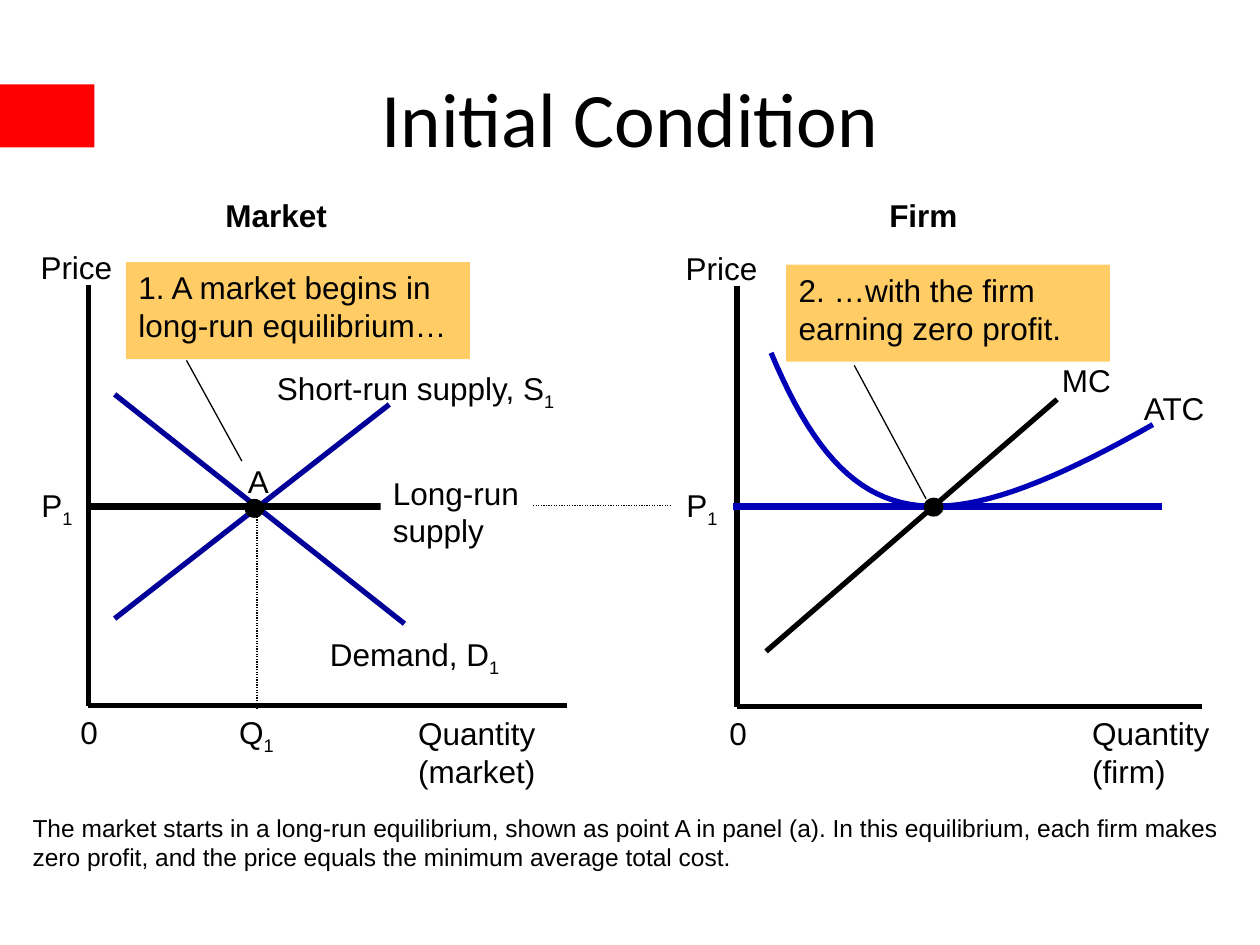
from lxml.etree import SubElement
from pptx import Presentation
from pptx.dml.color import RGBColor
from pptx.enum.dml import MSO_LINE_DASH_STYLE as Dash
from pptx.enum.shapes import MSO_CONNECTOR as Link, MSO_SHAPE as Shape
from pptx.enum.text import MSO_ANCHOR as Anchor, MSO_AUTO_SIZE as Fit, PP_ALIGN as Align
from pptx.oxml.ns import qn
from pptx.util import Inches, Pt

BLACK = RGBColor(0x00, 0x00, 0x00)
WHITE = RGBColor(0xFF, 0xFF, 0xFF)
RED = RGBColor(0xFF, 0x00, 0x00)
NAVY = RGBColor(0x00, 0x00, 0x99)
BLUE = RGBColor(0x00, 0x00, 0xB8)
AMBER = RGBColor(0xFF, 0xCC, 0x66)
STEPS = 40


def add_title(slide, text):
    title = slide.shapes.title
    title.left, title.top, title.width, title.height = map(Inches, (0.5, 0.3, 9, 1.25))
    title.text_frame.text = text
    title.text_frame.vertical_anchor = Anchor.MIDDLE
    para = title.text_frame.paragraphs[0]
    para.alignment = Align.CENTER
    para.font.name, para.font.size = "Calibri", Pt(44)
    para.font.color.rgb = BLACK


def add_solid(slide, kind, box, color):
    shape = slide.shapes.add_shape(kind, *map(Inches, box))
    shape.shadow.inherit = False
    shape.fill.solid()
    shape.fill.fore_color.rgb = color
    shape.line.fill.background()


def add_text(slide, box, text, size=18, wrap=False, bold=False, align=Align.LEFT, fill=None):
    shape = slide.shapes.add_textbox(*map(Inches, box))
    if fill is not None:
        shape.fill.solid()
        shape.fill.fore_color.rgb = fill
    frame = shape.text_frame
    frame.word_wrap = wrap
    frame.auto_size = Fit.SHAPE_TO_FIT_TEXT
    for i, row in enumerate(text.split("\n")):
        para = frame.add_paragraph() if i else frame.paragraphs[0]
        para.alignment = align
        para.font.name, para.font.size, para.font.bold = "Arial", Pt(size), bold
        para.font.color.rgb = BLACK
        base, _, sub = row.partition("_")
        para.add_run().text = base
        if sub:
            run = para.add_run()
            run.text = sub
            run._r.get_or_add_rPr().set("baseline", "-25000")


def add_line(slide, start, end, width=3, color=BLACK, dash=None):
    line = slide.shapes.add_connector(Link.STRAIGHT, *map(Inches, start + end))
    line.line.width = Pt(width)
    line.line.color.rgb = color
    if dash:
        line.line.dash_style = dash
    SubElement(line._element.spPr, qn("a:effectLst"))


def add_curve(slide, ends, color):
    def point(t):
        parts = ((1 - t) ** 3, 3 * t * (1 - t) ** 2, 3 * t * t * (1 - t), t ** 3)
        return tuple(Inches(sum(p * e[k] for p, e in zip(parts, ends))) for k in (0, 1))

    dots = [point(i / STEPS) for i in range(STEPS + 1)]
    pen = slide.shapes.build_freeform(*dots[0])
    pen.add_line_segments(dots[1:], close=False)
    curve = pen.convert_to_shape()
    curve.shadow.inherit = False
    curve.fill.background()
    curve.line.width = Pt(3)
    curve.line.color.rgb = color


def add_axes(slide, x, y, end, left):
    add_line(slide, (x, y - 3.34), (x, y))
    add_line(slide, (x, y), (end, y))
    add_text(slide, (left, y - 3.68, 0.78, 0.4), "Price", align=Align.RIGHT)
    add_text(slide, (x - 0.16, y + 0.01, 0.34, 0.4), "0")
    add_text(slide, (left + 0.02, 3.81, 0.46, 0.4), "P_1")


def add_market(slide):
    add_text(slide, (1.69, 1.51, 1.28, 0.4), "Market", wrap=True, bold=True)
    add_axes(slide, 0.7, 5.6, 4.5, 0.21)
    add_text(slide, (3.22, 5.62, 1.21, 0.77), "Quantity\n(market)")
    add_line(slide, (0.91, 4.91), (3.09, 3.21), color=NAVY)
    add_text(slide, (2.1, 2.88, 2.44, 0.4), "Short-run supply, S_1")
    add_line(slide, (0.91, 3.13), (3.21, 4.95), color=NAVY)
    add_text(slide, (2.52, 4.99, 1.57, 0.4), "Demand, D_1")
    add_line(slide, (2.04, 4.02), (2.04, 5.62), 0.75, dash=Dash.ROUND_DOT)
    add_text(slide, (1.8, 5.61, 0.49, 0.4), "Q_1")
    add_line(slide, (4.23, 4.01), (5.33, 4.01), 0.75, dash=Dash.ROUND_DOT)
    add_line(slide, (0.72, 4.02), (4.12, 4.02), 4.5)
    add_text(slide, (3.02, 3.71, 1.21, 0.77), "Long-run\nsupply", fill=WHITE)
    add_solid(slide, Shape.OVAL, (1.94, 3.96, 0.16, 0.15), BLACK)
    add_text(slide, (1.87, 3.62, 0.37, 0.4), "A")
    add_text(slide, (1, 2.08, 2.73, 0.77), "1. A market begins in\nlong-run equilibrium…",
             wrap=True, fill=AMBER)
    add_line(slide, (1.92, 3.66), (1.48, 2.86), 0.75)


def add_firm(slide):
    add_text(slide, (6.96, 1.51, 0.84, 0.4), "Firm", wrap=True, bold=True)
    add_axes(slide, 5.85, 5.61, 9.54, 5.33)
    add_text(slide, (8.57, 5.62, 1.14, 0.77), "Quantity\n(firm)")
    add_curve(slide, ((6.12, 2.8), (6.74, 4.28), (7.44, 4.34), (9.15, 3.37)), BLUE)
    add_text(slide, (8.98, 3.04, 0.69, 0.4), "ATC")
    add_line(slide, (6.08, 5.17), (8.39, 3.17))
    add_text(slide, (8.33, 2.82, 0.59, 0.4), "MC")
    add_line(slide, (5.82, 4.02), (9.22, 4.02), 4.5, BLUE)
    add_solid(slide, Shape.OVAL, (7.33, 3.95, 0.16, 0.15), BLACK)
    add_text(slide, (6.24, 2.1, 2.57, 0.77), "2. …with the firm\nearning zero profit.",
             wrap=True, fill=AMBER)
    add_line(slide, (7.35, 3.96), (6.78, 2.9), 0.75)


def main():
    deck = Presentation()
    deck.slide_width, deck.slide_height = Inches(10), Inches(7.5)
    slide = deck.slides.add_slide(deck.slide_layouts[5])
    add_solid(slide, Shape.RECTANGLE, (0, 0.67, 0.75, 0.5), RED)
    add_title(slide, "Initial Condition")
    add_market(slide)
    add_firm(slide)
    add_text(slide, (0.16, 6.4, 9.72, 0.57),
             "The market starts in a long-run equilibrium, shown as point A in panel (a). "
             "In this equilibrium, each firm makes zero profit, and the price equals "
             "the minimum average total cost.", size=14, wrap=True)
    deck.save("out.pptx")


if __name__ == "__main__":
    main()
